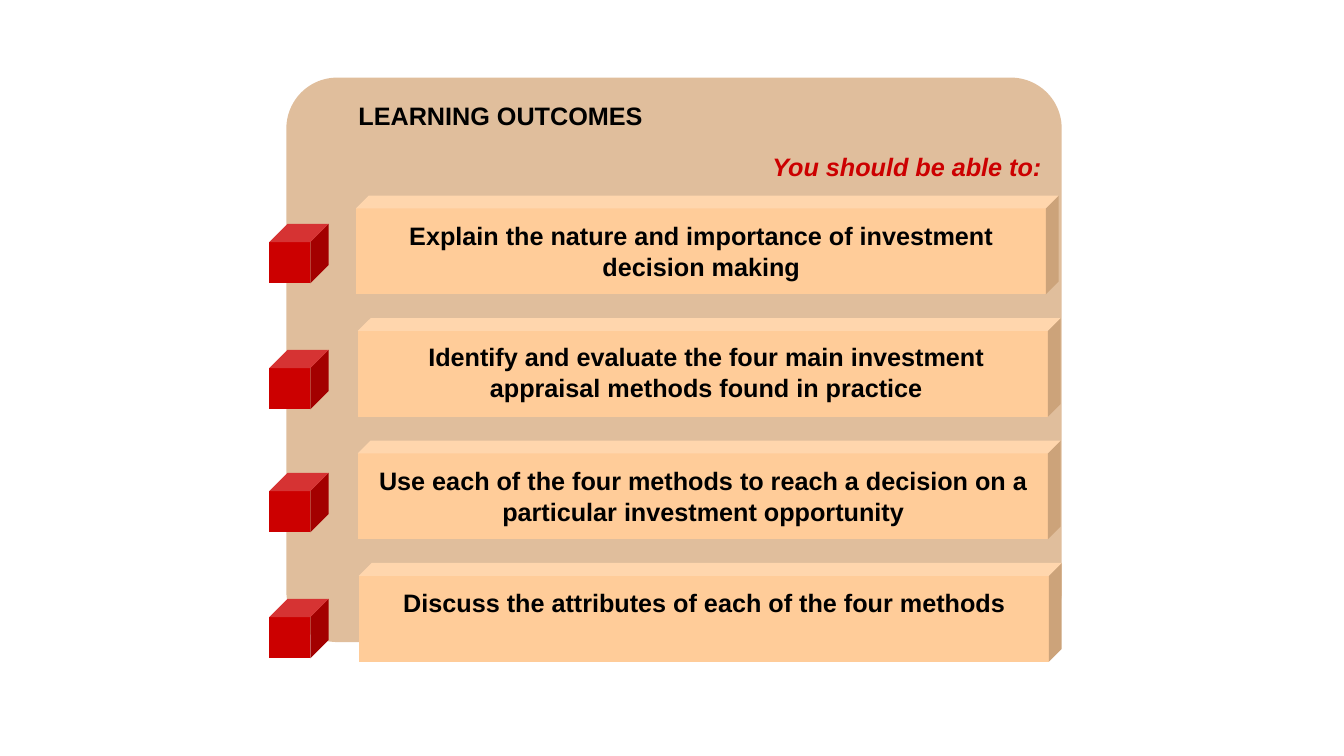
from pptx import Presentation
from pptx.dml.color import RGBColor
from pptx.enum.shapes import MSO_SHAPE
from pptx.enum.text import MSO_ANCHOR, MSO_AUTO_SIZE, PP_ALIGN
from pptx.util import Inches, Pt

COLOURS = {
    "panel": "E0BE9C",
    "bar": "FFCC99",
    "accent": "CC0000",
    "text": "000000",
}

deck = Presentation()
deck.slide_width = Inches(13.33)
deck.slide_height = Inches(7.5)
page = deck.slides.add_slide(deck.slide_layouts[5])


def write_text(text, left, top, width, height, box=None,
               align=PP_ALIGN.CENTER, colour="text", italic=False):
    position = [Inches(value) for value in (left, top, width, height)]
    if box is None:
        box = page.shapes.add_textbox(*position)
    box.left, box.top, box.width, box.height = position
    frame = box.text_frame
    frame.word_wrap = True
    frame.auto_size = MSO_AUTO_SIZE.NONE
    frame.vertical_anchor = MSO_ANCHOR.TOP
    para = frame.paragraphs[0]
    para.alignment = align
    span = para.add_run()
    span.text = text
    span.font.name = "Arial"
    span.font.size = Pt(18)
    span.font.bold = True
    span.font.italic = italic
    span.font.color.rgb = RGBColor.from_string(COLOURS[colour])


def add_block(preset, left, top, width, height, adjustment, colour):
    block = page.shapes.add_shape(
        preset, Inches(left), Inches(top), Inches(width), Inches(height))
    block.adjustments[0] = adjustment
    block.fill.solid()
    block.fill.fore_color.rgb = RGBColor.from_string(COLOURS[colour])
    block.line.fill.background()
    block.shadow.inherit = False
    return block


panel = add_block(MSO_SHAPE.ROUNDED_RECTANGLE, 2.84, 0.77, 7.69, 5.6, 0.09, "panel")
title = page.shapes.title
title.element.addprevious(panel.element)
write_text("LEARNING OUTCOMES", 3.13, 0.94, 3.67, 0.4, box=title)
write_text("You should be able to:", 6.38, 1.45, 4.05, 0.4,
           align=PP_ALIGN.RIGHT, colour="accent", italic=True)

outcomes = [
    ("Explain the nature and importance of investment decision making",
     3.53, 2.22, (3.66, 2.14, 6.59, 0.7)),
    ("Identify and evaluate the four main investment appraisal methods found in practice",
     3.55, 3.47, (3.81, 3.34, 6.39, 0.7)),
    ("Use each of the four methods to reach a decision on a particular investment opportunity",
     3.55, 4.69, (3.29, 4.57, 7.37, 0.7)),
    ("Discuss the attributes of each of the four methods",
     3.56, 5.94, (3.64, 5.78, 6.69, 0.4)),
]

for row, (outcome, bar_left, marker_top, text_position) in enumerate(outcomes):
    bar_top = 1.94 + row * 1.215
    add_block(MSO_SHAPE.CUBE, bar_left, bar_top, 6.97, 0.98, 0.13, "bar")
    add_block(MSO_SHAPE.CUBE, 2.67, marker_top, 0.59, 0.59, 0.31, "accent")
    write_text(outcome, *text_position)

deck.save("out.pptx")
